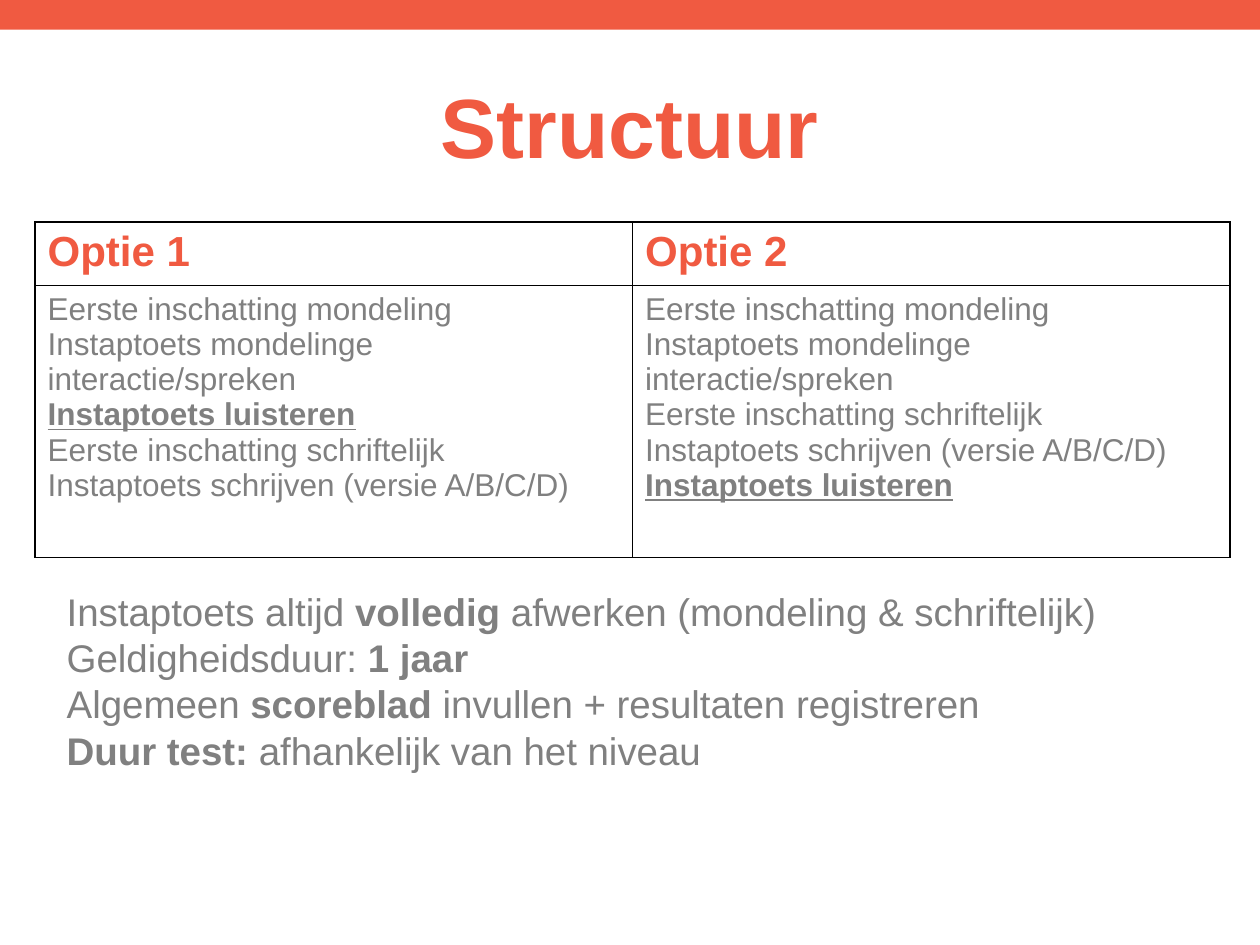
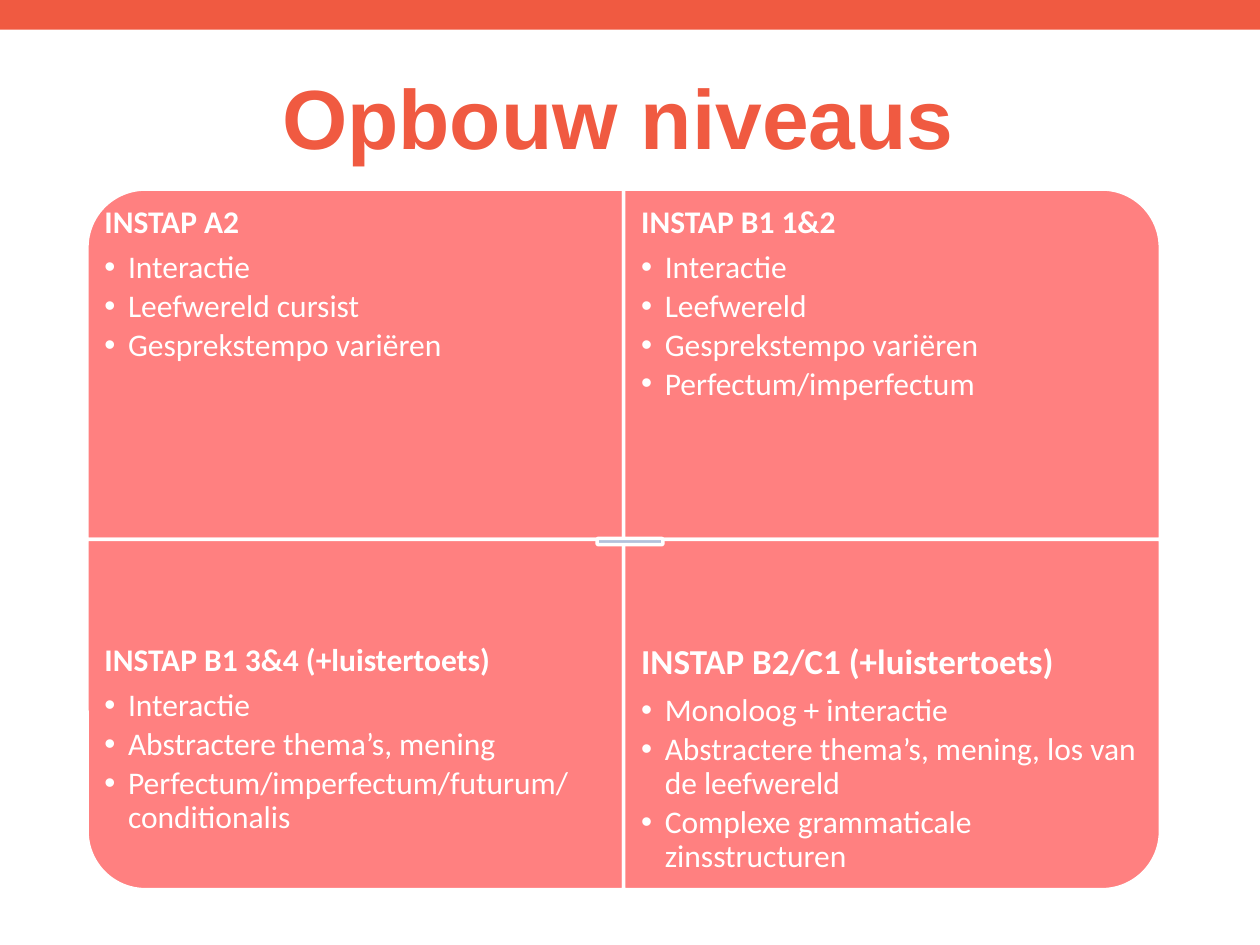
from dataclasses import dataclass

from lxml.etree import SubElement
from pptx import Presentation
from pptx.dml.color import RGBColor
from pptx.enum.shapes import MSO_SHAPE
from pptx.enum.text import MSO_ANCHOR, PP_ALIGN
from pptx.oxml import parse_xml
from pptx.oxml.ns import nsdecls, qn
from pptx.util import Pt


@dataclass(frozen=True)
class Theme:
    accent: str = "F05A41"
    body: str = "808080"
    quadrant: str = "FF8080"
    hub: str = "B3C1DB"
    white: str = "FFFFFF"
    border: str = "000000"
    font: str = "Arial"
    diagram_font: str = "Calibri"
    title_size: int = 48
    header_size: int = 24
    rules_size: int = 22
    text_size: int = 18


THEME = Theme()
WIDTH, HEIGHT = 720, 540

OPTIONS = {
    "Optie 1": [
        "Eerste inschatting mondeling",
        "Instaptoets mondelinge interactie/spreken",
        "*Instaptoets luisteren*",
        "Eerste inschatting schriftelijk",
        "Instaptoets schrijven (versie A/B/C/D)",
    ],
    "Optie 2": [
        "Eerste inschatting mondeling",
        "Instaptoets mondelinge interactie/spreken",
        "Eerste inschatting schriftelijk",
        "Instaptoets schrijven (versie A/B/C/D)",
        "*Instaptoets luisteren*",
    ],
}

TEST_RULES = [
    "Instaptoets altijd *volledig *afwerken (mondeling & schriftelijk)",
    "Geldigheidsduur: *1 jaar*",
    "Algemeen *scoreblad* invullen + resultaten registreren",
    "*Duur test:* afhankelijk van het niveau",
]

# Heading, heading size, bullets and rotation; row by row
LEVELS = [
    ("INSTAP A2", 18,
     ["Interactie", "Leefwereld cursist", "Gesprekstempo variëren"], 270),
    ("INSTAP B1 1&2", 18,
     ["Interactie", "Leefwereld", "Gesprekstempo variëren",
      "Perfectum/imperfectum"], 0),
    ("INSTAP B1 3&4 (+luistertoets)", 18,
     ["Interactie", "Abstractere thema’s, mening",
      "Perfectum/imperfectum/futurum/conditionalis"], 180),
    ("INSTAP B2/C1 (+luistertoets)", 20,
     ["Monoloog + interactie",
      "Abstractere thema’s, mening, los van de leefwereld",
      "Complexe grammaticale zinsstructuren"], 90),
]


def rgb(color):
    return RGBColor.from_string(color)


def write(p, text, *, size, color, font=THEME.font, bold=False,
          underline_bold=False, align=None, spacing=None, after=None,
          bullet_indent=None):
    """Fill paragraph p; parts of the text between asterisks are bold."""
    if align is not None:
        p.alignment = align
    if spacing is not None:
        p.line_spacing = spacing
    if after is not None:
        p.space_after = Pt(after)
    if bullet_indent is not None:
        pPr = p._p.get_or_add_pPr()
        pPr.set("marL", str(Pt(bullet_indent)))
        pPr.set("indent", str(-Pt(bullet_indent)))
        SubElement(pPr, qn("a:buFont"), typeface=THEME.font)
        SubElement(pPr, qn("a:buChar"), char="•")
    for i, part in enumerate(text.split("*")):
        if not part:
            continue
        marked = i % 2 == 1
        r = p.add_run()
        r.text = part
        r.font.size = Pt(size)
        r.font.name = font
        r.font.color.rgb = rgb(color)
        r.font.bold = bold or marked
        if marked and underline_bold:
            r.font.underline = True


def write_all(tf, texts, **style):
    for i, text in enumerate(texts):
        write(tf.paragraphs[0] if i == 0 else tf.add_paragraph(), text, **style)


def add_text_box(s, box, *, margins=(7.2, 3.6), anchor=MSO_ANCHOR.TOP):
    tf = s.shapes.add_textbox(*map(Pt, box)).text_frame
    tf.word_wrap = True
    tf.vertical_anchor = anchor
    tf.margin_left = tf.margin_right = Pt(margins[0])
    tf.margin_top = tf.margin_bottom = Pt(margins[1])
    return tf


def add_shape(s, kind, box, fill, line=None):
    sp = s.shapes.add_shape(kind, *map(Pt, box))
    sp.shadow.inherit = False
    sp.fill.solid()
    sp.fill.fore_color.rgb = rgb(fill)
    if line:
        sp.line.color.rgb = rgb(line)
        sp.line.width = Pt(2)
    else:
        sp.line.fill.background()
    return sp


def add_base_slide(prs, title, title_box, *, anchor, spacing=None):
    s = prs.slides.add_slide(prs.slide_layouts[6])
    add_shape(s, MSO_SHAPE.RECTANGLE, (0, 0, WIDTH, 17), THEME.accent)
    tf = add_text_box(s, title_box, margins=(0, 0), anchor=anchor)
    write(tf.paragraphs[0], title, size=THEME.title_size, color=THEME.accent,
          bold=True, align=PP_ALIGN.CENTER, spacing=spacing)
    return s


def set_borders(cell):
    tcPr = cell._tc.get_or_add_tcPr()
    for i, side in enumerate(("lnL", "lnR", "lnT", "lnB")):
        tcPr.insert(i, parse_xml(
            f'<a:{side} {nsdecls("a")} w="{Pt(1)}"><a:solidFill>'
            f'<a:srgbClr val="{THEME.border}"/></a:solidFill></a:{side}>'))


def add_options_table(s, box, header_height):
    x, y, w, h = box
    table = s.shapes.add_table(2, len(OPTIONS), *map(Pt, box)).table
    table.first_row = table.horz_banding = False
    table.rows[0].height = Pt(header_height)
    table.rows[1].height = Pt(h - header_height)
    for col, (name, steps) in enumerate(OPTIONS.items()):
        table.columns[col].width = Pt(w / len(OPTIONS))
        header, body = table.cell(0, col), table.cell(1, col)
        write(header.text_frame.paragraphs[0], name, size=THEME.header_size,
              color=THEME.accent, bold=True)
        write_all(body.text_frame, steps, size=THEME.text_size,
                  color=THEME.body, underline_bold=True)
        for cell in (header, body):
            cell.fill.background()
            set_borders(cell)


def add_quadrant(s, box, rotation):
    """Draw a quadrant whose one rounded corner is turned outward."""
    x, y, w, h = box
    if rotation % 180:
        x, y, w, h = x + (w - h) / 2, y + (h - w) / 2, h, w
    sp = add_shape(s, MSO_SHAPE.ROUND_1_RECTANGLE, (x, y, w, h),
                   THEME.quadrant, THEME.white)
    sp.rotation = rotation


def add_level_matrix(s, box):
    x, y, w, h = box
    cell_w, cell_h = w / 2, h / 2
    text_h = cell_h * 0.75
    style = dict(color=THEME.white, font=THEME.diagram_font, spacing=0.9)
    for i, (heading, size, bullets, rotation) in enumerate(LEVELS):
        row, col = divmod(i, 2)
        left, top = x + col * cell_w, y + row * cell_h
        add_quadrant(s, (left, top, cell_w, cell_h), rotation)
        text_top = top + row * (cell_h - text_h)
        tf = add_text_box(s, (left, text_top, cell_w, text_h),
                          margins=(10, 10))
        write(tf.paragraphs[0], heading, size=size, bold=True,
              after=size * 0.35, **style)
        for bullet in bullets:
            write(tf.add_paragraph(), bullet, size=THEME.text_size,
                  after=THEME.text_size * 0.15, bullet_indent=13.5, **style)
    hub_w, hub_h = 37.5, 3.5
    add_shape(s, MSO_SHAPE.ROUNDED_RECTANGLE,
              (WIDTH / 2 - hub_w / 2, y + cell_h - 0.5, hub_w, hub_h),
              THEME.hub, THEME.white)


def add_structure_slide(prs):
    s = add_base_slide(prs, "Structuur ", (55.5, 20, 622, 80),
                       anchor=MSO_ANCHOR.BOTTOM, spacing=0.82)
    add_options_table(s, (20, 127, 683, 189), 33.5)
    tf = add_text_box(s, (31, 332.5, 646.5, 158.5))
    write_all(tf, TEST_RULES, size=THEME.rules_size, color=THEME.body)


def add_levels_slide(prs):
    s = add_base_slide(prs, "Opbouw niveaus ", (36, 21.5, 648, 90),
                       anchor=MSO_ANCHOR.MIDDLE)
    add_level_matrix(s, (49.7, 108, 613.4, 400.4))


def main():
    prs = Presentation()
    prs.slide_width, prs.slide_height = Pt(WIDTH), Pt(HEIGHT)
    add_structure_slide(prs)
    add_levels_slide(prs)
    prs.save("out.pptx")


if __name__ == "__main__":
    main()
